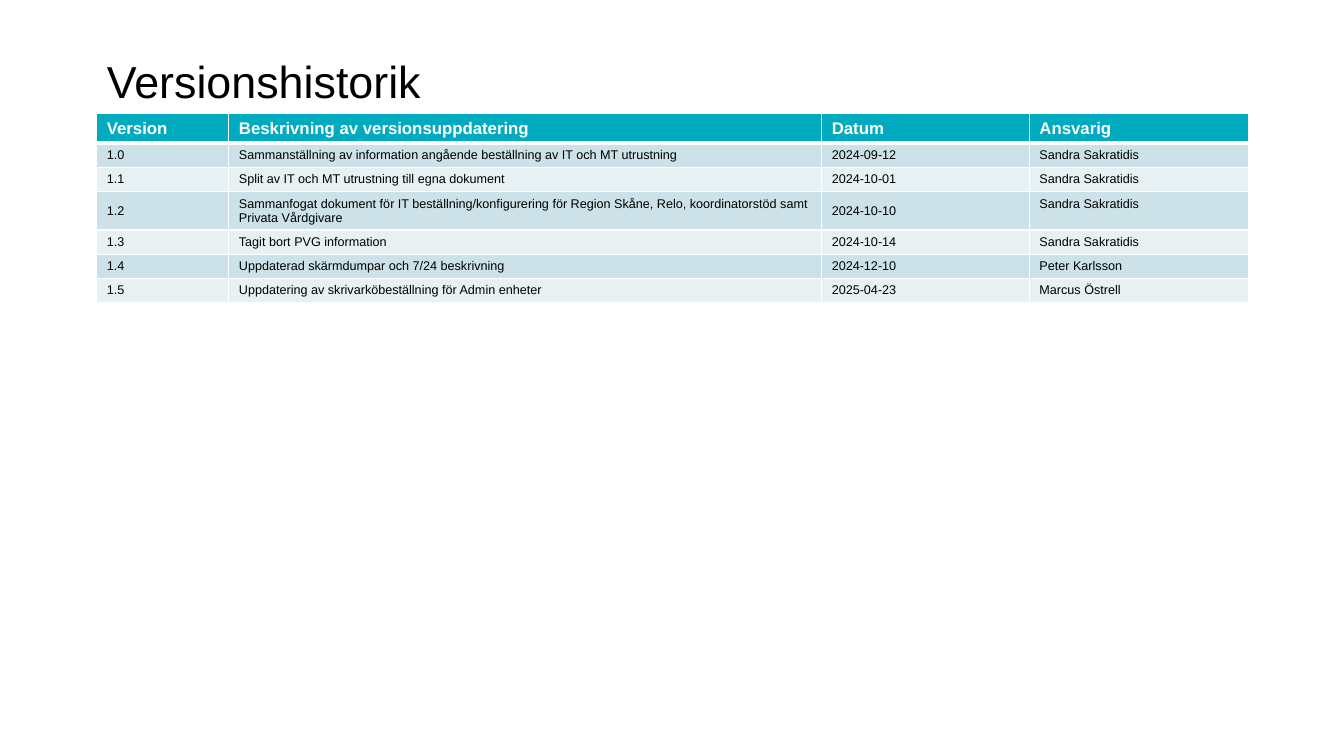
from dataclasses import dataclass

from lxml import etree
from pptx import Presentation
from pptx.dml.color import RGBColor
from pptx.enum.text import MSO_ANCHOR, MSO_AUTO_SIZE, PP_ALIGN
from pptx.oxml.ns import qn
from pptx.util import Inches, Pt

TOP, MIDDLE = MSO_ANCHOR.TOP, MSO_ANCHOR.MIDDLE
LEFT = PP_ALIGN.LEFT
NO_AUTOFIT = MSO_AUTO_SIZE.NONE

TITLE = "Versionshistorik"
HEADINGS = ("Version", "Beskrivning av versionsuppdatering", "Datum", "Ansvarig")
VERSIONS = [
    ("1.0", "Sammanställning av information angående beställning av IT och MT utrustning",
     "2024-09-12", "Sandra Sakratidis"),
    ("1.1", "Split av IT och MT utrustning till egna dokument",
     "2024-10-01", "Sandra Sakratidis"),
    ("1.2", "Sammanfogat dokument för IT beställning/konfigurering för Region Skåne, Relo, "
            "koordinatorstöd samt Privata Vårdgivare",
     "2024-10-10", "Sandra Sakratidis"),
    ("1.3", "Tagit bort PVG information", "2024-10-14", "Sandra Sakratidis"),
    ("1.4", "Uppdaterad skärmdumpar och 7/24 beskrivning", "2024-12-10", "Peter Karlsson"),
    ("1.5", "Uppdatering av skrivarköbeställning för Admin enheter",
     "2025-04-23", "Marcus Östrell"),
]


@dataclass(frozen=True)
class Theme:
    font: str = "Arial"
    text: str = "000000"
    white: str = "FFFFFF"
    header: str = "00ABC0"
    bands: tuple = ("CCE2E8", "E7F1F4")
    title_size: int = 32
    header_size: int = 12
    body_size: int = 9
    rule: int = 1
    header_rule: int = 3


THEME = Theme()
MARGIN, CONTENT_WIDTH = 0.96, 11.42
TABLE_TOP = 1.13
COLUMN_WIDTHS = (1.31, 5.88, 2.06, 2.17)
HEADER_HEIGHT, LINE_ROW_HEIGHT, WRAPPED_ROW_HEIGHT = 0.29, 0.24, 0.38
WRAP_LENGTH = 95
CENTRED_COLUMNS = (0, 2)


def write(frame, text, size, color=THEME.text, bold=False):
    paragraph = frame.paragraphs[0]
    paragraph.text = text
    paragraph.alignment = LEFT
    paragraph.line_spacing = 1.0
    font = paragraph.runs[0].font
    font.name, font.size, font.bold = THEME.font, Pt(size), bold
    font.color.rgb = RGBColor.from_string(color)


def add_borders(cell, **widths):
    """Draw white cell borders; widths in points are keyed L, R, T and B."""
    properties = cell._tc.get_or_add_tcPr()
    for side in "LRTB":
        width = Pt(widths.get(side, THEME.rule))
        line = etree.SubElement(properties, qn(f"a:ln{side}"), w=str(width))
        fill = etree.SubElement(line, qn("a:solidFill"))
        etree.SubElement(fill, qn("a:srgbClr"), val=THEME.white)


def add_title(slide):
    title = slide.shapes.title
    title.left, title.top = Inches(MARGIN), Inches(0.43)
    title.width, title.height = Inches(CONTENT_WIDTH), Inches(0.47)
    frame = title.text_frame
    frame.auto_size = NO_AUTOFIT
    frame.vertical_anchor = TOP
    frame.margin_top = Inches(0.1)
    frame.margin_bottom = 0
    write(frame, TITLE, THEME.title_size)


def add_history(slide):
    rows = [HEADINGS, *VERSIONS]
    heights = [HEADER_HEIGHT] + [
        WRAPPED_ROW_HEIGHT if len(version[1]) > WRAP_LENGTH else LINE_ROW_HEIGHT
        for version in VERSIONS
    ]
    history = slide.shapes.add_table(
        len(rows), len(HEADINGS), Inches(MARGIN), Inches(TABLE_TOP),
        Inches(CONTENT_WIDTH), Inches(sum(heights))).table
    for column, width in zip(history.columns, COLUMN_WIDTHS):
        column.width = Inches(width)
    for r, (values, height) in enumerate(zip(rows, heights)):
        history.rows[r].height = Inches(height)
        is_header = r == 0
        fill = THEME.header if is_header else THEME.bands[(r - 1) % 2]
        for c, value in enumerate(values):
            cell = history.cell(r, c)
            add_borders(cell,
                        T=THEME.header_rule if r == 1 else THEME.rule,
                        B=THEME.header_rule if is_header else THEME.rule)
            cell.fill.solid()
            cell.fill.fore_color.rgb = RGBColor.from_string(fill)
            centred = not is_header and c in CENTRED_COLUMNS
            cell.vertical_anchor = MIDDLE if centred else TOP
            write(cell.text_frame, value,
                  size=THEME.header_size if is_header else THEME.body_size,
                  color=THEME.white if is_header else THEME.text,
                  bold=is_header)


def main():
    deck = Presentation()
    deck.slide_width, deck.slide_height = Inches(13.33), Inches(7.5)
    slide = deck.slides.add_slide(deck.slide_layouts[5])
    add_title(slide)
    add_history(slide)
    deck.save("out.pptx")


if __name__ == "__main__":
    main()
